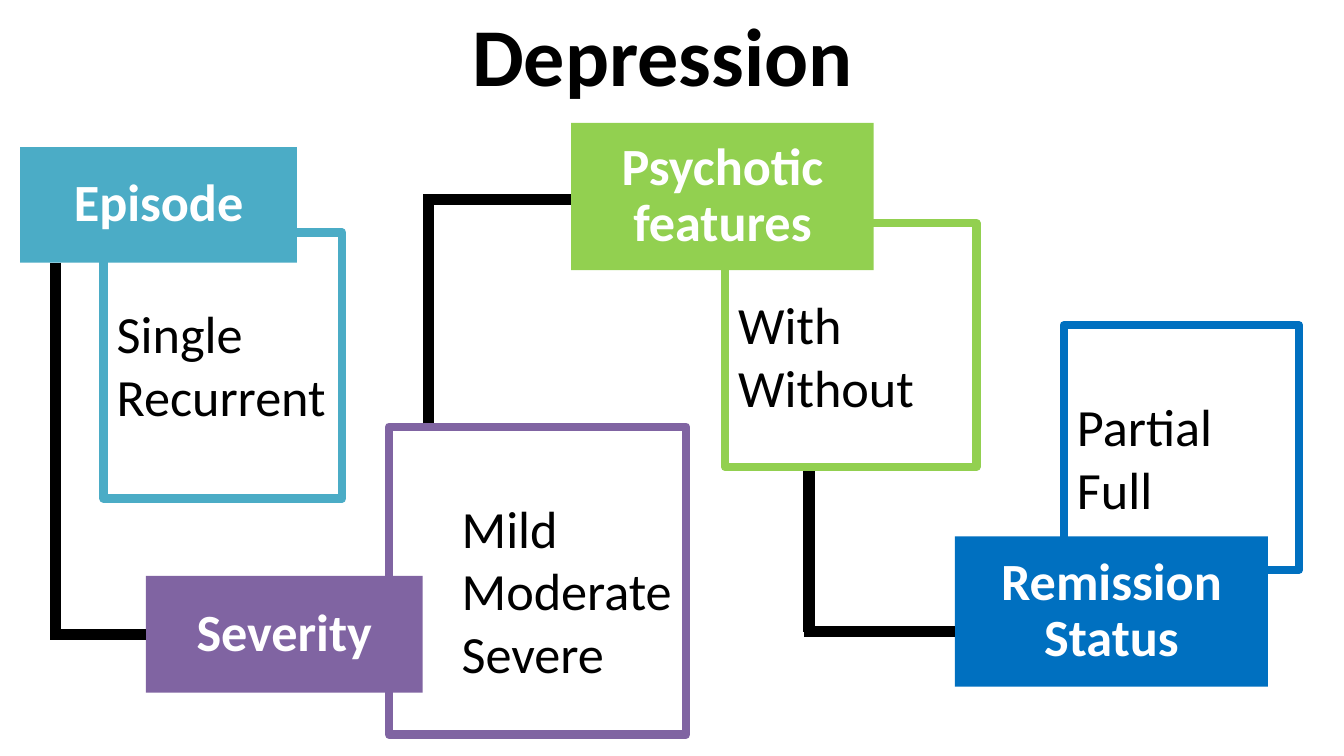
from lxml.etree import SubElement
from pptx import Presentation
from pptx.dml.color import RGBColor
from pptx.enum.shapes import MSO_CONNECTOR, MSO_SHAPE
from pptx.enum.text import MSO_ANCHOR, PP_ALIGN
from pptx.oxml.ns import qn
from pptx.util import Emu, Pt

EMU_PER_PX = 4572  # 200 px to the inch
LEFT_SIDE = 1

# frame box, label box relative to the frame, colour, label, items, item indent
CARDS = [
    ((1583, 484, 350, 364), (-162, 314, 466, 224), "0070C0",
     "Remission Status", ["Partial", "Full"], 20),
    ((1079, 332, 374, 363), (-229, -149, 450, 219), "92D050",
     "Psychotic features", ["With", "Without"], 20),
    ((579, 635, 442, 458), (-362, 222, 412, 174), "8064A2",
     "Severity", ["Mild", "Moderate", "Severe"], 108),
    ((154, 346, 355, 396), (-124, -127, 412, 172), "4BACC6",
     "Episode", ["Single", "Recurrent"], 20),
]


def px(length):
    return Emu(length * EMU_PER_PX)


def color(hex_text):
    return RGBColor.from_string(hex_text)


def put_text(shape, lines, size=28, ink="000000", bold=False, align=PP_ALIGN.LEFT,
             anchor=MSO_ANCHOR.TOP, margins=(20, 10, 20, 10), spacing=None):
    """Fill a shape with one paragraph per line; margins run left, top, right, bottom."""
    frame = shape.text_frame
    frame.word_wrap = True
    frame.vertical_anchor = anchor
    (frame.margin_left, frame.margin_top,
     frame.margin_right, frame.margin_bottom) = map(px, margins)
    for index, line in enumerate(lines):
        para = frame.add_paragraph() if index else frame.paragraphs[0]
        para.alignment = align
        if spacing:
            para.line_spacing = spacing
        span = para.add_run()
        span.text = line
        span.font.name = "Calibri"
        span.font.size = Pt(size)
        span.font.bold = bold
        span.font.color.rgb = color(ink)


def add_box(page, box, fill=None, outline=None):
    shape = page.shapes.add_shape(MSO_SHAPE.RECTANGLE, *map(px, box))
    shape.shadow.inherit = False
    if fill:
        shape.fill.solid()
        shape.fill.fore_color.rgb = color(fill)
    else:
        shape.fill.background()
    if outline:
        shape.line.color.rgb = color(outline)
        shape.line.width = Pt(4.5)
    else:
        shape.line.fill.background()
    return shape


def add_card(page, box, label_box, tint, title, items, indent):
    """Draw an outlined list with its overlapping label, and return the label."""
    left, top, _, _ = box
    outline = add_box(page, box, outline=tint)
    put_text(outline, items, margins=(indent, 103, 0, 10))
    across, down, width, height = label_box
    label = add_box(page, (left + across, top + down, width, height), fill=tint)
    put_text(label, [title], ink="FFFFFF", bold=True, align=PP_ALIGN.CENTER,
             anchor=MSO_ANCHOR.MIDDLE, margins=(32, 18, 32, 18), spacing=0.9)
    return label


def add_line(page, start, end):
    line = page.shapes.add_connector(MSO_CONNECTOR.STRAIGHT, *map(px, start + end))
    line.line.color.rgb = color("000000")
    line.line.width = Pt(6)
    SubElement(line._element.spPr, qn("a:effectLst"))
    return line


def add_elbow(page, start, corner_y, end_x, label=None):
    """Run vertically from start to corner_y, then across to a label's left side."""
    x, _ = start
    add_line(page, start, (x, corner_y))
    across = add_line(page, (x - 8, corner_y), (end_x, corner_y))
    if label is not None:
        across.end_connect(label, LEFT_SIDE)


def add_title(page, box, text):
    title = page.shapes.add_textbox(*map(px, box))
    put_text(title, [text], size=44, bold=True, align=PP_ALIGN.CENTER,
             anchor=MSO_ANCHOR.MIDDLE)


def main():
    deck = Presentation()
    deck.slide_width, deck.slide_height = px(2000), px(1125)
    page = deck.slides.add_slide(deck.slide_layouts[6])
    labels = {card[3]: add_card(page, *card) for card in CARDS}
    add_elbow(page, (83, 391), 944, 217, labels["Severity"])
    add_elbow(page, (638, 630), 297, 850)
    add_elbow(page, (1204, 701), 940, 1421)
    add_title(page, (0, -14, 2000, 188), "Depression ")
    deck.save("out.pptx")


if __name__ == "__main__":
    main()
